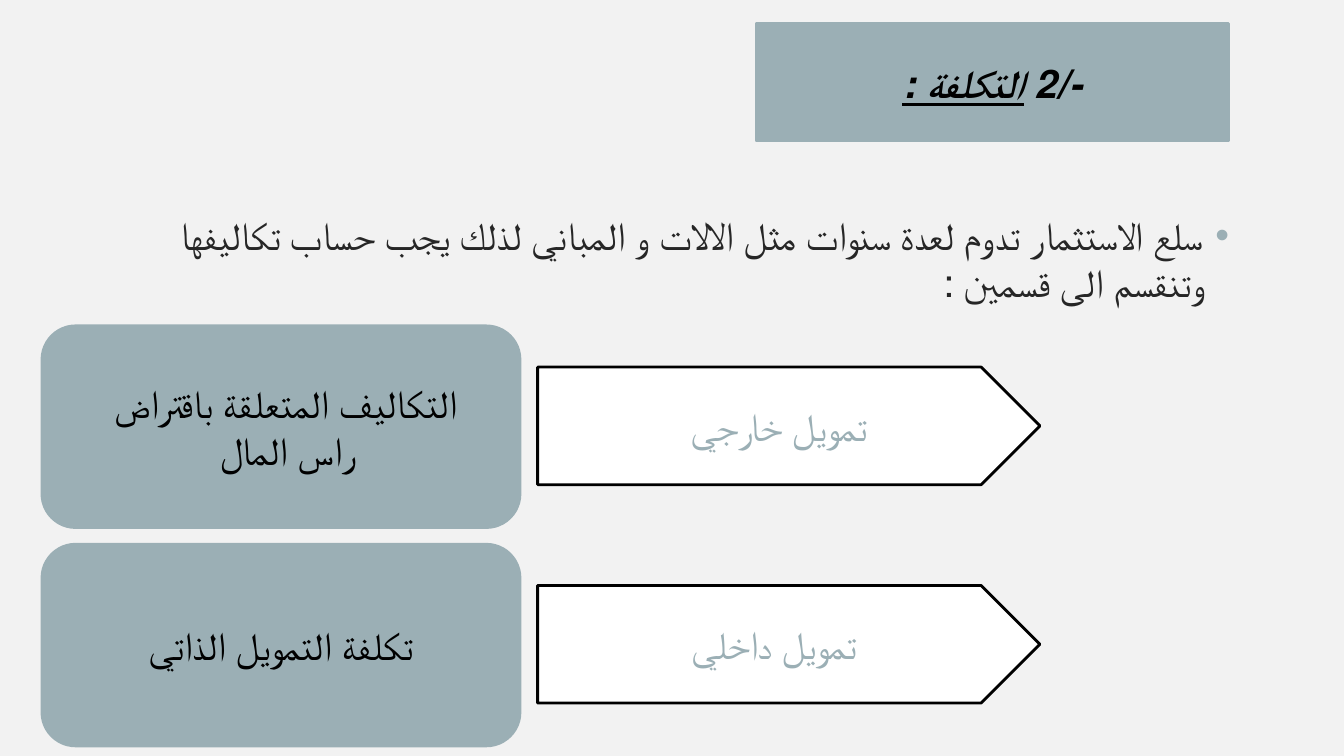
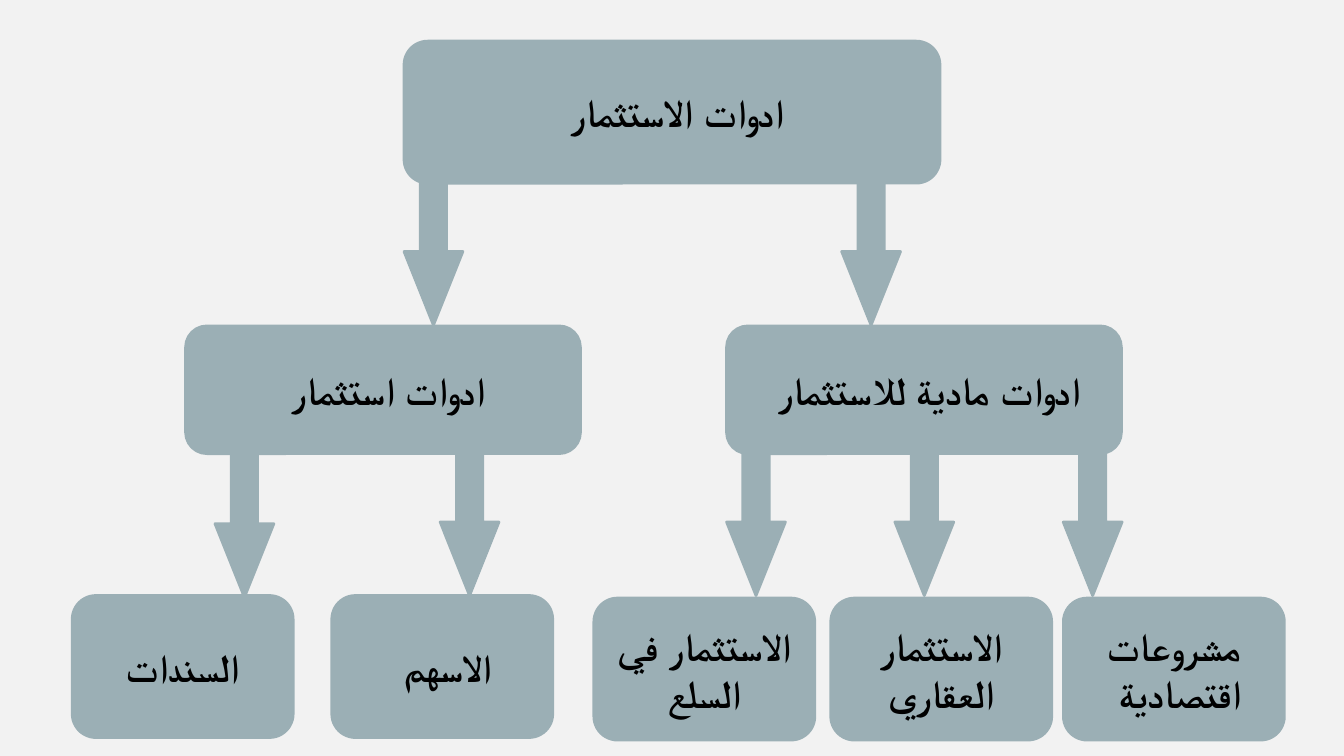
"""Build two Arabic slides on investment costs and investment tools."""
import dataclasses

import lxml.etree
import pptx
import pptx.dml.color
import pptx.enum.shapes
import pptx.enum.text
import pptx.oxml.ns
import pptx.util


@dataclasses.dataclass(frozen=True)
class Theme:
    paper: str = "F2F2F2"
    accent: str = "9BAFB5"
    white: str = "FFFFFF"
    ink: str = "000000"
    body: str = "262626"
    font: str = "Calibri"
    size: float = 28
    outline: float = 2


theme = Theme()
rgb = pptx.dml.color.RGBColor.from_string
Shape = pptx.enum.shapes.MSO_SHAPE
Align = pptx.enum.text.PP_ALIGN

deck = pptx.Presentation()
deck.slide_width = pptx.util.Inches(13.33)
deck.slide_height = pptx.util.Inches(7.5)
column = deck.slide_width / 80
row = deck.slide_height / 45


def write(box, lines, color, bold=False, align=Align.CENTER):
    """Fill a box with right-to-left paragraphs, each a list of runs."""
    frame = box.text_frame
    frame.word_wrap = True
    for index, runs in enumerate(lines):
        para = frame.add_paragraph() if index else frame.paragraphs[0]
        para.alignment = align
        para.font.name = theme.font
        para.font.size = pptx.util.Pt(theme.size)
        para.font.color.rgb = rgb(color)
        para.font.bold = bold
        para._p.get_or_add_pPr().set("rtl", "1")
        for text in runs:
            para.add_run().text = text
    return frame.paragraphs


def draw(page, kind, left, top, width, height, fill=theme.accent, line=theme.accent):
    """Draw a flat shape placed in grid columns and rows."""
    shape = page.shapes.add_shape(
        kind, int(left * column), int(top * row), int(width * column), int(height * row))
    shape.shadow.inherit = False
    shape.fill.solid()
    shape.fill.fore_color.rgb = rgb(fill)
    shape.line.color.rgb = rgb(line)
    shape.line.width = pptx.util.Pt(theme.outline)
    if kind != Shape.DOWN_ARROW:
        shape.text_frame.vertical_anchor = pptx.enum.text.MSO_ANCHOR.MIDDLE
    return shape


pages = []
for number in range(2):
    page = deck.slides.add_slide(deck.slide_layouts[6])
    page.background.fill.solid()
    page.background.fill.fore_color.rgb = rgb(theme.paper)
    pages.append(page)
cost_page, tools_page = pages

intro = cost_page.shapes.add_textbox(
    int(6.25 * column), int(12.3 * row), int(67.5 * column), int(7 * row))
intro_text = "سلع الاستثمار تدوم لعدة سنوات مثل الالات و المباني لذلك يجب حساب تكاليفها وتنقسم الى قسمين :"
para = write(intro, [[intro_text]], theme.body, align=Align.RIGHT)[0]
para.space_before = pptx.util.Pt(10)
properties = para._p.get_or_add_pPr()
indent = pptx.util.Inches(0.25)
properties.set("marL", str(indent))
properties.set("indent", str(-indent))
bullet_color = lxml.etree.Element(pptx.oxml.ns.qn("a:buClr"))
lxml.etree.SubElement(bullet_color, pptx.oxml.ns.qn("a:srgbClr"), val=theme.accent)
bullet_font = lxml.etree.Element(pptx.oxml.ns.qn("a:buFont"), typeface="Arial")
bullet = lxml.etree.Element(pptx.oxml.ns.qn("a:buChar"), char="•")
defaults = properties.find(pptx.oxml.ns.qn("a:defRPr"))
for element in (bullet_color, bullet_font, bullet):
    defaults.addprevious(element)

title = draw(cost_page, Shape.RECTANGLE, 45, 1.4, 28.15, 7)
para = write(title, [["-/2 ", "التكلفة :"]], theme.ink, bold=True)[0]
para.font.italic = True
para.runs[1].font.underline = True

costs = [
    ("تمويل خارجي ", [["التكاليف المتعلقة باقتراض "], ["راس المال "]]),
    ("تمويل داخلي", [["تكلفة التمويل الذاتي"]]),
]
for index, (source, details) in enumerate(costs):
    top = 19.4 + 13 * index
    card = draw(cost_page, Shape.ROUNDED_RECTANGLE, 2.5, top, 28.45, 12)
    write(card, details, theme.ink)
    arrow = draw(cost_page, Shape.PENTAGON, 32, top + 2.45, 29.9, 7, theme.white, theme.ink)
    write(arrow, [[source]], theme.accent)

arrows = [(24.05, 10.9), (50.1, 10.9), (12.8, 27.1), (26.2, 27)]
arrows += [(43.25 + 10.02 * step, 27) for step in range(3)]
for left, top in arrows:
    arrow = draw(tools_page, Shape.DOWN_ARROW, left, top, 3.5, 8.45)
    arrow.adjustments[0] = 0.445
    arrow.adjustments[1] = 1.251

levels = [
    (31.9, 8.45, [("ادوات الاستثمار ", 24.05, 2.45)]),
    (23.5, 7.6, [
        ("ادوات مادية للاستثمار ", 43.25, 19.4),
        ("ادوات استثمار ", 11.05, 19.4),
    ]),
    (13.15, 8.45, [
        ("مشروعات اقتصادية ", 63.3, 35.6),
        ("الاستثمار العقاري", 49.45, 35.6),
        ("الاستثمار في السلع", 35.35, 35.6),
        ("الاسهم ", 19.75, 35.45),
        ("السندات", 4.3, 35.45),
    ]),
]
for width, height, nodes in levels:
    for label, left, top in nodes:
        node = draw(tools_page, Shape.ROUNDED_RECTANGLE, left, top, width, height)
        write(node, [[label]], theme.ink, bold=True)

deck.save("out.pptx")
